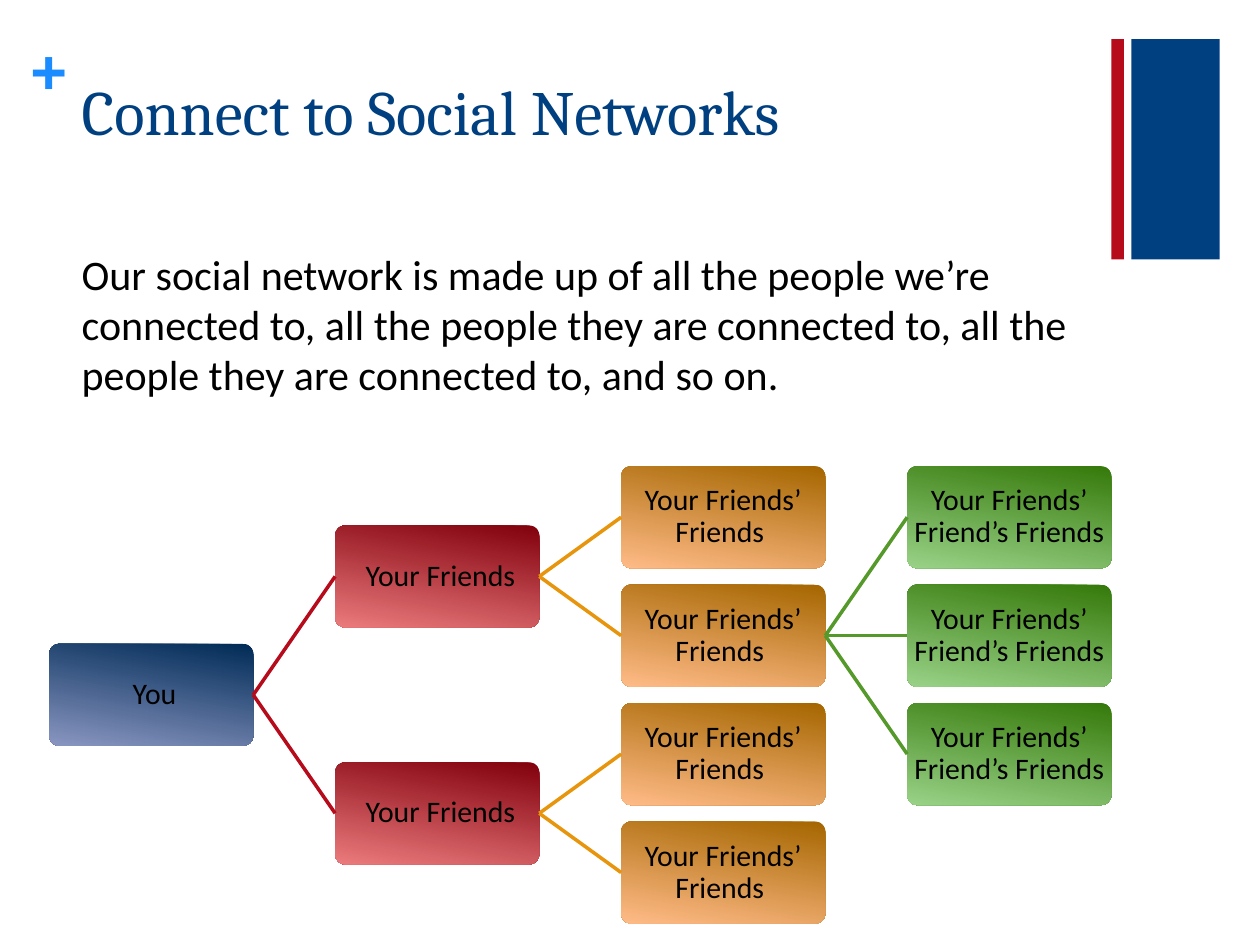
from lxml import etree
from pptx import Presentation
from pptx.dml.color import RGBColor
from pptx.enum.shapes import MSO_CONNECTOR, MSO_SHAPE
from pptx.enum.text import MSO_ANCHOR, PP_ALIGN
from pptx.oxml.ns import qn
from pptx.util import Inches, Pt

STRAIGHT = MSO_CONNECTOR.STRAIGHT
RECTANGLE, ROUNDED = MSO_SHAPE.RECTANGLE, MSO_SHAPE.ROUNDED_RECTANGLE
LEFT, CENTER = PP_ALIGN.LEFT, PP_ALIGN.CENTER
MIDDLE = MSO_ANCHOR.MIDDLE
LEFT_SITE, RIGHT_SITE = 1, 3

COLORS = {"navy": "004080", "red": "B50B1B", "plus": "1A8CFF", "text": "000000",
          "orange": "E8950E", "green": "55992B"}

TITLE = "Connect to Social Networks"
BODY = ("Our social network is made up of all the people we’re connected to, "
        "all the people they are connected to, all the people they are "
        "connected to, and so on.")

# One entry per level: label, gradient top, gradient bottom, incoming line colour
LEVELS = [
    (" You", "002B56", "8996C1", None),
    (" Your Friends", "81000C", "EB7B7D", "red"),
    ("Your Friends’ Friends ", "A56600", "FFBB87", "orange"),
    ("Your Friends’ Friend’s Friends", "35790A", "99D287", "green"),
]
# Each person is (row, people they connect to)
NETWORK = (1.5, [
    (0.5, [(0, []), (1, [(0, []), (1, []), (2, [])])]),
    (2.5, [(2, []), (3, [])]),
])

BARS = [("navy", 8.98, 0.7), ("red", 8.82, 0.1)]
BAR_TOP, BAR_HEIGHT = 0.31, 1.75
TREE_LEFT, TREE_TOP = 0.39, 3.7
COLUMN_STEP, ROW_STEP = 2.27, 0.94
BOX_WIDTH, BOX_HEIGHT = 1.62, 0.81


def rgb(hex_color):
    return RGBColor.from_string(hex_color)


def write(frame, text, font, size, color, align=LEFT, bold=False):
    frame.word_wrap = True
    paragraph = frame.paragraphs[0]
    paragraph.alignment = align
    run = paragraph.add_run()
    run.text = text
    run.font.name, run.font.size, run.font.bold = font, Pt(size), bold
    run.font.color.rgb = rgb(color)
    return paragraph


def set_margins(frame, inches):
    frame.margin_left = frame.margin_right = Inches(inches)
    frame.margin_top = frame.margin_bottom = Inches(inches)


def add_text(slide, box, *style, **options):
    frame = slide.shapes.add_textbox(*map(Inches, box)).text_frame
    write(frame, *style, **options)
    return frame


def add_person_box(slide, level, row):
    label, top_color, bottom_color, _ = LEVELS[level]
    box = slide.shapes.add_shape(
        ROUNDED, Inches(TREE_LEFT + level * COLUMN_STEP),
        Inches(TREE_TOP + row * ROW_STEP), Inches(BOX_WIDTH), Inches(BOX_HEIGHT))
    box.adjustments[0] = 0.1
    box.shadow.inherit = False
    box.line.fill.background()
    box.fill.gradient()
    box.fill.gradient_angle = 260
    for stop, color in zip(box.fill.gradient_stops, (top_color, bottom_color)):
        stop.color.rgb = rgb(color)
    frame = box.text_frame
    set_margins(frame, 0.03)
    frame.vertical_anchor = MIDDLE
    paragraph = write(frame, label, "Calibri", 17, COLORS["text"], CENTER)
    paragraph.line_spacing = 0.9
    return box


def connect(slide, source, target, color):
    link = slide.shapes.add_connector(STRAIGHT, 0, 0, 0, 0)
    link.begin_connect(source, RIGHT_SITE)
    link.end_connect(target, LEFT_SITE)
    link.line.color.rgb = rgb(color)
    link.line.width = Pt(2)
    etree.SubElement(link._element.spPr, qn("a:effectLst"))


def add_network(slide, person, level=0, parent=None):
    """Draw a person, the line from the parent, and everyone they lead to."""
    row, friends = person
    box = add_person_box(slide, level, row)
    if parent is not None:
        connect(slide, parent, box, COLORS[LEVELS[level][3]])
    for friend in friends:
        add_network(slide, friend, level + 1, box)


def main():
    deck = Presentation()
    deck.slide_width, deck.slide_height = Inches(10), Inches(7.5)
    slide = deck.slides.add_slide(deck.slide_layouts[6])

    for color, left, width in BARS:
        bar = slide.shapes.add_shape(RECTANGLE, Inches(left), Inches(BAR_TOP),
                                     Inches(width), Inches(BAR_HEIGHT))
        bar.shadow.inherit = False
        bar.fill.solid()
        bar.fill.fore_color.rgb = rgb(COLORS[color])
        bar.line.fill.background()

    plus = add_text(slide, (0.24, 0.25, 0.29, 0.61), "+", "Arial", 36,
                    COLORS["plus"], bold=True)
    set_margins(plus, 0)
    add_text(slide, (0.55, 0.53, 8.26, 1.22), TITLE, "Cambria", 36, COLORS["navy"])
    add_text(slide, (0.55, 1.92, 8.26, 1.29), BODY, "Calibri", 24, COLORS["text"])
    add_network(slide, NETWORK)

    deck.save("out.pptx")


if __name__ == "__main__":
    main()
